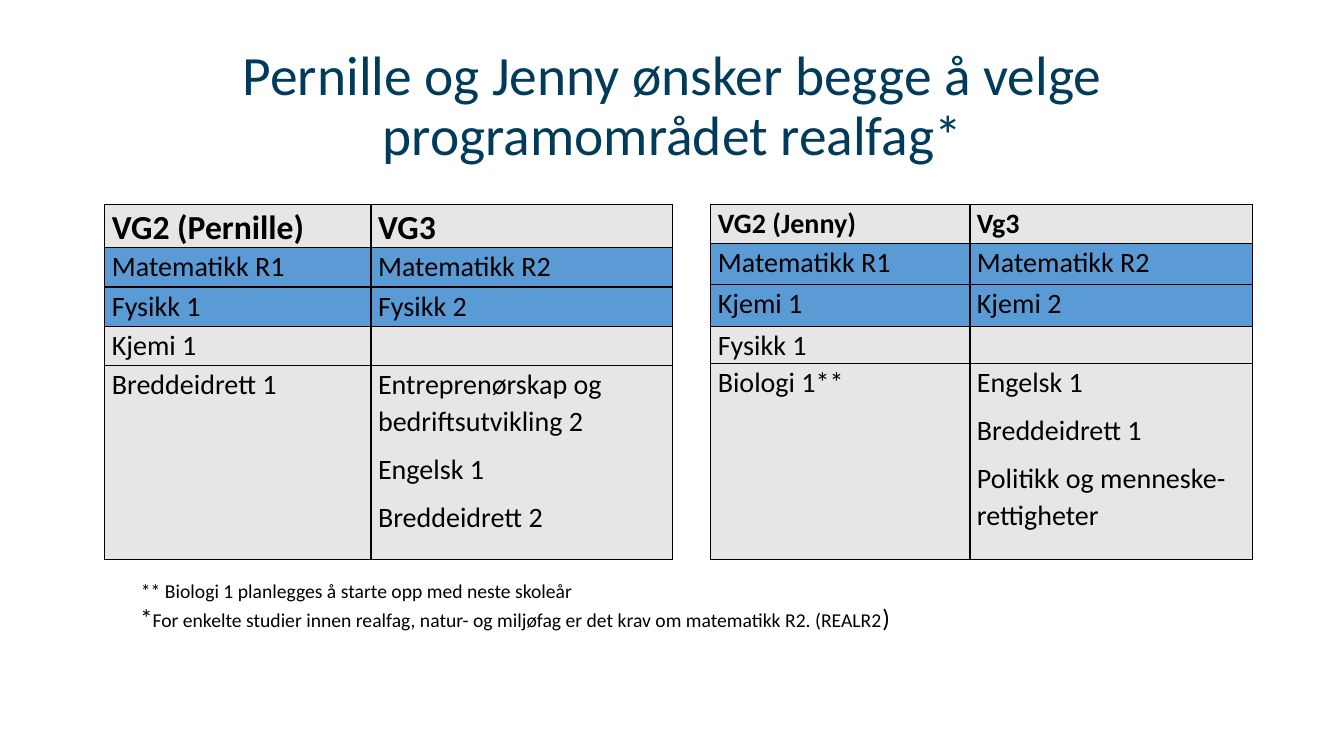
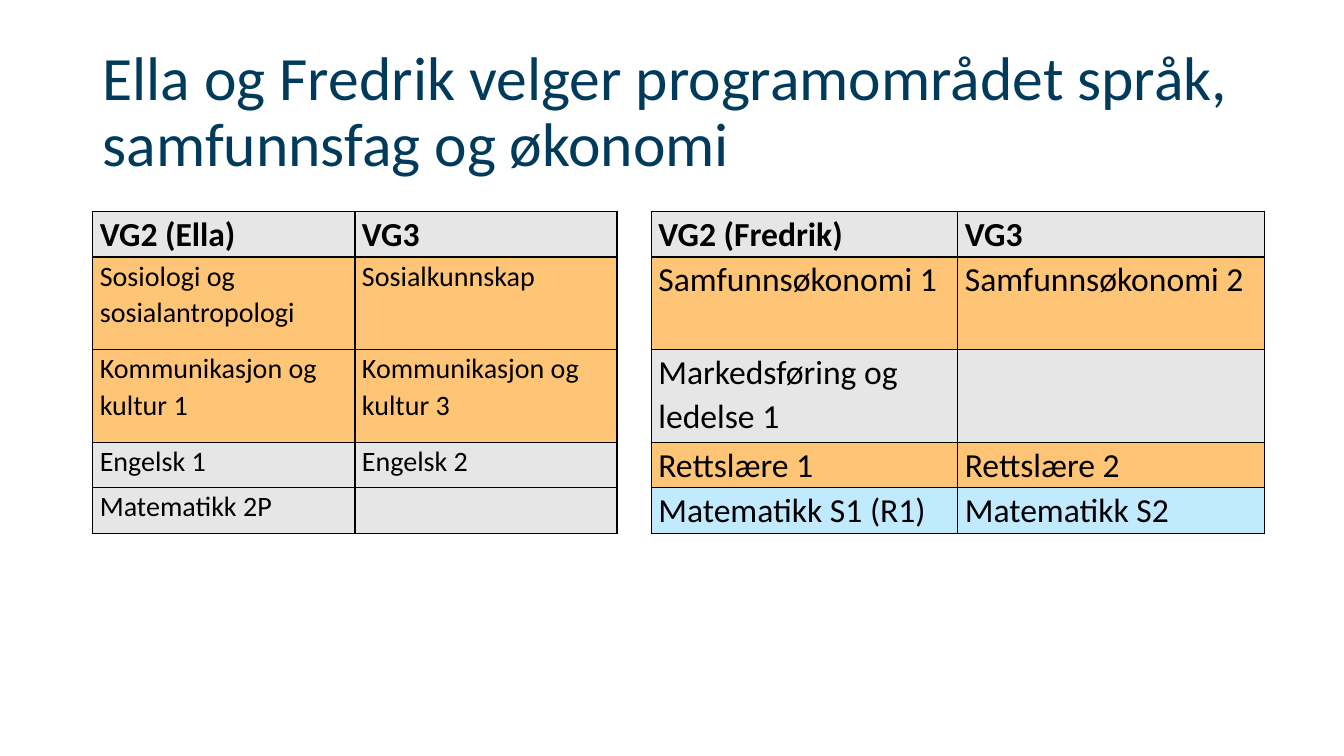
from lxml.etree import SubElement
from pptx import Presentation
from pptx.dml.color import RGBColor as RGB
from pptx.enum.text import MSO_ANCHOR as Anchor, PP_ALIGN as Align
from pptx.oxml.ns import qn
from pptx.util import Pt

PX = 9144
NAVY = RGB(0x00, 0x3B, 0x5C)
BLACK = RGB(0x00, 0x00, 0x00)
GREY = RGB(0xE7, 0xE6, 0xE6)
BLUE = RGB(0x5B, 0x9B, 0xD5)
ORANGE = RGB(0xFF, 0xC5, 0x76)
SKY = RGB(0xC1, 0xEA, 0xFF)

FONT = "Calibri"
BODY = {"line_spacing": 1.07, "space_after": Pt(8)}
TITLE = {"line_spacing": 0.9}
CELL = {"margin_left": 7 * PX, "margin_right": 7 * PX,
        "margin_top": 0, "margin_bottom": 0}
PLAIN_TABLE = {"first_row": False, "horz_banding": False}
BORDER_TAGS = ("a:lnL", "a:lnR", "a:lnT", "a:lnB")


def apply(obj, fmt):
    for name, value in fmt.items():
        setattr(obj, name, value)


def style_font(font, size, color=BLACK, bold=False):
    apply(font, {"name": FONT, "size": Pt(size), "bold": bold})
    font.color.rgb = color


def add_text(s, box, runs, fmt, color=BLACK, anchor=Anchor.TOP):
    tf = s.shapes.add_textbox(*(v * PX for v in box)).text_frame
    apply(tf, {"word_wrap": True, "vertical_anchor": anchor})
    p = tf.paragraphs[0]
    apply(p, fmt)
    for text, size in runs:
        r = p.add_run()
        r.text = text
        style_font(r.font, size, color)


def add_title(s, box, text, size, align=Align.LEFT):
    add_text(s, box, [(text, size)], {**TITLE, "alignment": align},
             NAVY, Anchor.MIDDLE)


def add_borders(cell):
    tc_pr = cell._tc.get_or_add_tcPr()
    for tag in BORDER_TAGS:
        ln = SubElement(tc_pr, qn(tag), w=str(Pt(1)))
        fill = SubElement(ln, qn("a:solidFill"))
        SubElement(fill, qn("a:srgbClr"), val=str(BLACK))


def fill_cell(cell, text, color, size, bold):
    apply(cell, CELL)
    add_borders(cell)
    cell.fill.solid()
    cell.fill.fore_color.rgb = color
    cell.text = text
    for p in cell.text_frame.paragraphs:
        apply(p, BODY)
        style_font(p.font, size, bold=bold)


def add_subject_table(s, left, top, widths, heights, rows, head_size, size):
    box = (left, top, sum(widths), sum(heights))
    table = s.shapes.add_table(len(rows), len(widths),
                               *(v * PX for v in box)).table
    apply(table, PLAIN_TABLE)
    for column, width in zip(table.columns, widths):
        column.width = width * PX
    for i, (color, *texts) in enumerate(rows):
        table.rows[i].height = heights[i] * PX
        for j, text in enumerate(texts):
            fill_cell(table.cell(i, j), text, color,
                      size if i else head_size, i == 0)


def build_science(s):
    add_title(s, (92, 40, 1150, 133),
              "Pernille og Jenny ønsker begge å velge programområdet realfag*",
              39.6, Align.CENTER)
    pernille = [
        (GREY, "VG2 (Pernille)", "VG3"),
        (BLUE, "Matematikk R1", "Matematikk R2"),
        (BLUE, "Fysikk 1", "Fysikk 2"),
        (GREY, "Kjemi 1", ""),
        (GREY, "Breddeidrett 1",
         "Entreprenørskap og bedriftsutvikling 2\nEngelsk 1\nBreddeidrett 2"),
    ]
    jenny = [
        (GREY, "VG2 (Jenny)", "Vg3"),
        (BLUE, "Matematikk R1", "Matematikk R2"),
        (BLUE, "Kjemi 1", "Kjemi 2"),
        (GREY, "Fysikk 1", ""),
        (GREY, "Biologi 1**",
         "Engelsk 1\nBreddeidrett 1\nPolitikk og menneske-rettigheter"),
    ]
    add_subject_table(s, 104, 203, (264, 299), (41, 39, 39, 39, 192),
                      pernille, 24, 20)
    add_subject_table(s, 705, 203, (257, 280), (39, 40, 42, 37, 194),
                      jenny, 20, 20)
    add_text(s, (130, 568, 667, 34),
             [("** Biologi 1 planlegges å starte opp med neste skoleår", 14)],
             BODY)
    add_text(s, (129, 591, 981, 41),
             [("*", 18),
              ("For enkelte studier innen realfag, natur- og miljøfag er det "
               "krav om matematikk R2. (REALR2", 14),
              (")", 18)], BODY)


def build_languages(s):
    add_title(s, (92, 40, 1150, 145),
              "Ella og Fredrik velger programområdet språk, "
              "samfunnsfag og økonomi", 44)
    ella = [
        (GREY, "VG2 (Ella)", "VG3"),
        (ORANGE, "Sosiologi og sosialantropologi", "Sosialkunnskap"),
        (ORANGE, "Kommunikasjon og kultur 1", "Kommunikasjon og kultur 3"),
        (GREY, "Engelsk 1", "Engelsk 2"),
        (GREY, "Matematikk 2P", ""),
    ]
    fredrik = [
        (GREY, "VG2 (Fredrik)", "VG3"),
        (ORANGE, "Samfunnsøkonomi 1", "Samfunnsøkonomi 2"),
        (GREY, "Markedsføring og ledelse 1", ""),
        (ORANGE, "Rettslære 1", "Rettslære 2"),
        (SKY, "Matematikk S1 (R1)", "Matematikk S2"),
    ]
    heights = (45, 92, 92, 45, 45)
    add_subject_table(s, 92, 210, (260, 260), heights, ella, 24, 20)
    add_subject_table(s, 646, 210, (304, 304), heights, fredrik, 24, 24)


def main():
    prs = Presentation()
    apply(prs, {"slide_width": 1333 * PX, "slide_height": 750 * PX})
    for build in (build_science, build_languages):
        build(prs.slides.add_slide(prs.slide_layouts[6]))
    prs.save("out.pptx")


if __name__ == "__main__":
    main()
